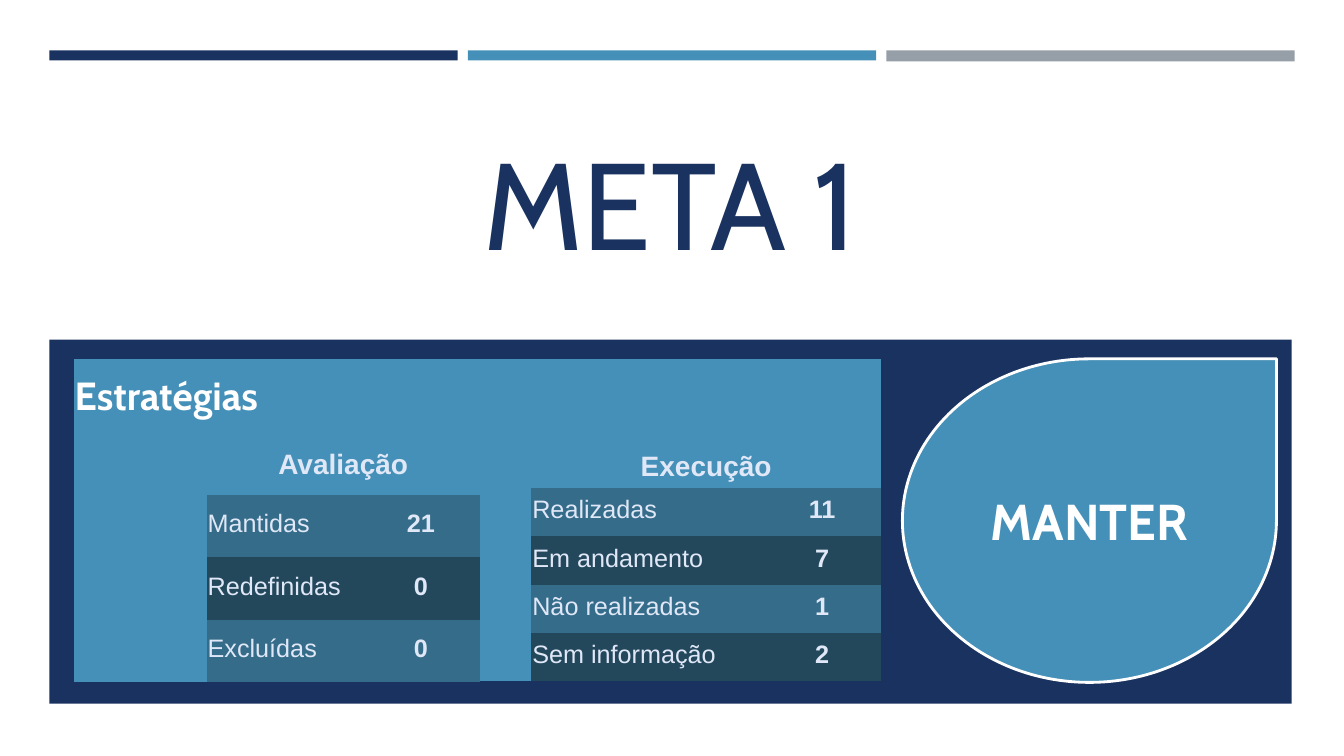
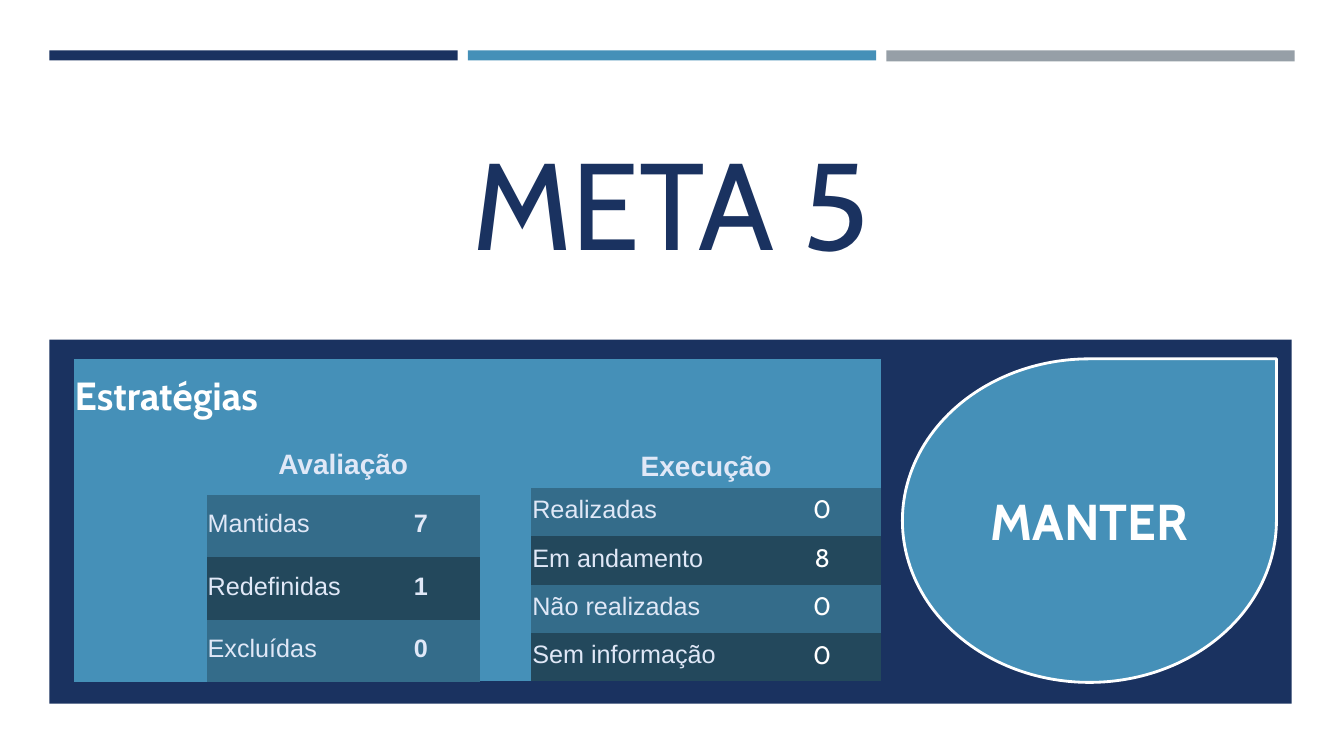
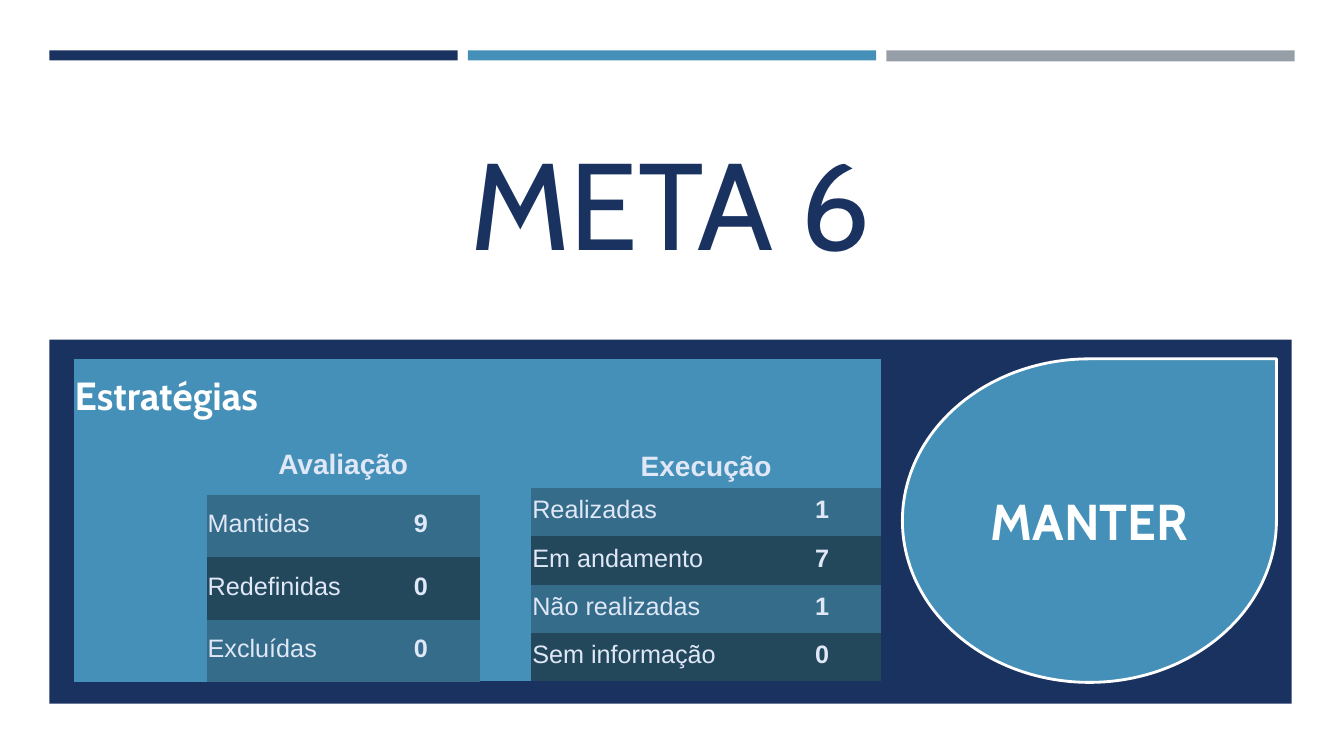
from pptx import Presentation
from pptx.dml.color import RGBColor
from pptx.enum.shapes import MSO_SHAPE as Shape
from pptx.enum.text import MSO_ANCHOR as Anchor, PP_ALIGN as Align
from pptx.oxml.ns import qn
from pptx.util import Inches, Pt

NAVY = RGBColor(0x1A, 0x32, 0x60)
BLUE = RGBColor(0x45, 0x90, 0xB8)
GRAY = RGBColor(0x96, 0x9F, 0xA7)
WHITE = RGBColor(0xFF, 0xFF, 0xFF)
PALE = RGBColor(0xE0, 0xE8, 0xF7)
BANDS = RGBColor(0x34, 0x6C, 0x8A), RGBColor(0x23, 0x48, 0x5C)

HEAD = "Cabin"
BODY = "Arial"
PLAIN = "{2D5ABB26-0587-4C30-8999-92F81FD0307C}"  # no style, no grid

REVIEW = "Mantidas", "Redefinidas", "Excluídas"
STATUS = "Realizadas", "Em andamento", "Não realizadas", "Sem informação"
NORMAL = dict(font=BODY, color=PALE, bold=True)
LIGHT = dict(font=HEAD, color=WHITE, bold=False)

# title, review counts, status counts, format of the status counts
GOALS = [
    ("META 1", (21, 0, 0), (11, 7, 1, 2), NORMAL),
    ("META 5", (7, 1, 0), (0, 8, 0, 0), LIGHT),
    ("META 6", (9, 0, 0), (1, 7, 1, 0), NORMAL),
]


def write(frame, text, size=18, font=BODY, color=PALE, bold=False,
          align=Align.LEFT):
    para = frame.paragraphs[0]
    para.alignment = align
    run = para.add_run()
    run.text = text
    run.font.size = Pt(size)
    run.font.name = font
    run.font.color.rgb = color
    run.font.bold = bold


def block(slide, box, fill, kind=Shape.RECTANGLE, line=None):
    shape = slide.shapes.add_shape(kind, *map(Inches, box))
    shape.shadow.inherit = False
    shape.fill.solid()
    shape.fill.fore_color.rgb = fill
    if line is None:
        shape.line.fill.background()
    else:
        shape.line.color.rgb = line
        shape.line.width = Pt(2)
    return shape


def decor(slide):
    """Draw the top bars and the lower panel found on every slide."""
    for i, (color, high) in enumerate([(NAVY, 0.1), (BLUE, 0.1), (GRAY, 0.11)]):
        block(slide, (0.49 + 4.15 * i, 0.5, 4.05, high), color)
    block(slide, (0.49, 3.37, 12.32, 3.61), NAVY)


def title(slide, text):
    box = slide.shapes.add_textbox(*map(Inches, (0.64, 1.12, 12.02, 1.61)))
    frame = box.text_frame
    frame.word_wrap = True
    frame.margin_bottom = 0
    frame.vertical_anchor = Anchor.BOTTOM
    write(frame, text, size=88, font=HEAD, color=NAVY, align=Align.CENTER)


def grid(slide, left, cols, rows):
    """Add an unstyled table with blue cells and tight margins."""
    box = left, 3.56, sum(cols), sum(rows)
    holder = slide.shapes.add_table(len(rows), len(cols), *map(Inches, box))
    for style in holder._element.iter(qn("a:tableStyleId")):
        style.text = PLAIN
    table = holder.table
    table.first_row = table.horz_banding = False
    for col, width in zip(table.columns, cols):
        col.width = Inches(width)
    for row, height in zip(table.rows, rows):
        row.height = Inches(height)
    for cell in table.iter_cells():
        cell.margin_left = cell.margin_right = cell.margin_top = Inches(0.01)
        cell.margin_bottom = Inches(0.05)
        cell.vertical_anchor = Anchor.MIDDLE
        paint(cell, BLUE)
    return table


def paint(cell, color):
    cell.fill.solid()
    cell.fill.fore_color.rgb = color


def counts(table, head, names, values, style):
    """Fill the last two columns: heading in row 1, banded counts below."""
    last = len(table.columns) - 1
    top = table.cell(1, last - 1)
    top.merge(table.cell(1, last))
    write(top.text_frame, head, size=20, bold=True, align=Align.CENTER)
    for i, (name, value) in enumerate(zip(names, values)):
        label, count = (table.cell(i + 2, c) for c in (last - 1, last))
        for cell in (label, count):
            paint(cell, BANDS[i % 2])
        write(label.text_frame, name)
        write(count.text_frame, str(value), align=Align.CENTER, **style)
    return top


def review(slide, values):
    table = grid(slide, 0.73, [0.44, 0.88, 1.54, 1.17], [0.79, 0.56] + [0.62] * 3)
    first = table.cell(0, 0)
    first.merge(table.cell(0, 2))
    write(first.text_frame, "Estratégias", size=28, font=HEAD, color=WHITE,
          bold=True)
    counts(table, "Avaliação", REVIEW, values, NORMAL)


def status(slide, values, style):
    table = grid(slide, 4.76, [0.51, 2.3, 1.17], [0.84, 0.44] + [0.48] * 4)
    table.cell(0, 0).merge(table.cell(0, 1))
    top = counts(table, "Execução", STATUS, values, style)
    top.vertical_anchor = Anchor.BOTTOM


def verdict(slide, text):
    drop = block(slide, (8.95, 3.56, 3.71, 3.21), BLUE, Shape.TEAR, WHITE)
    drop.text_frame.word_wrap = True
    drop.text_frame.vertical_anchor = Anchor.MIDDLE
    write(drop.text_frame, text, size=36, font=HEAD, color=WHITE, bold=True,
          align=Align.CENTER)


def main():
    deck = Presentation()
    deck.slide_width, deck.slide_height = Inches(13.33), Inches(7.5)
    for name, checks, states, style in GOALS:
        slide = deck.slides.add_slide(deck.slide_layouts[6])
        decor(slide)
        title(slide, name)
        review(slide, checks)
        status(slide, states, style)
        verdict(slide, "MANTER")
    deck.save("out.pptx")


if __name__ == "__main__":
    main()
